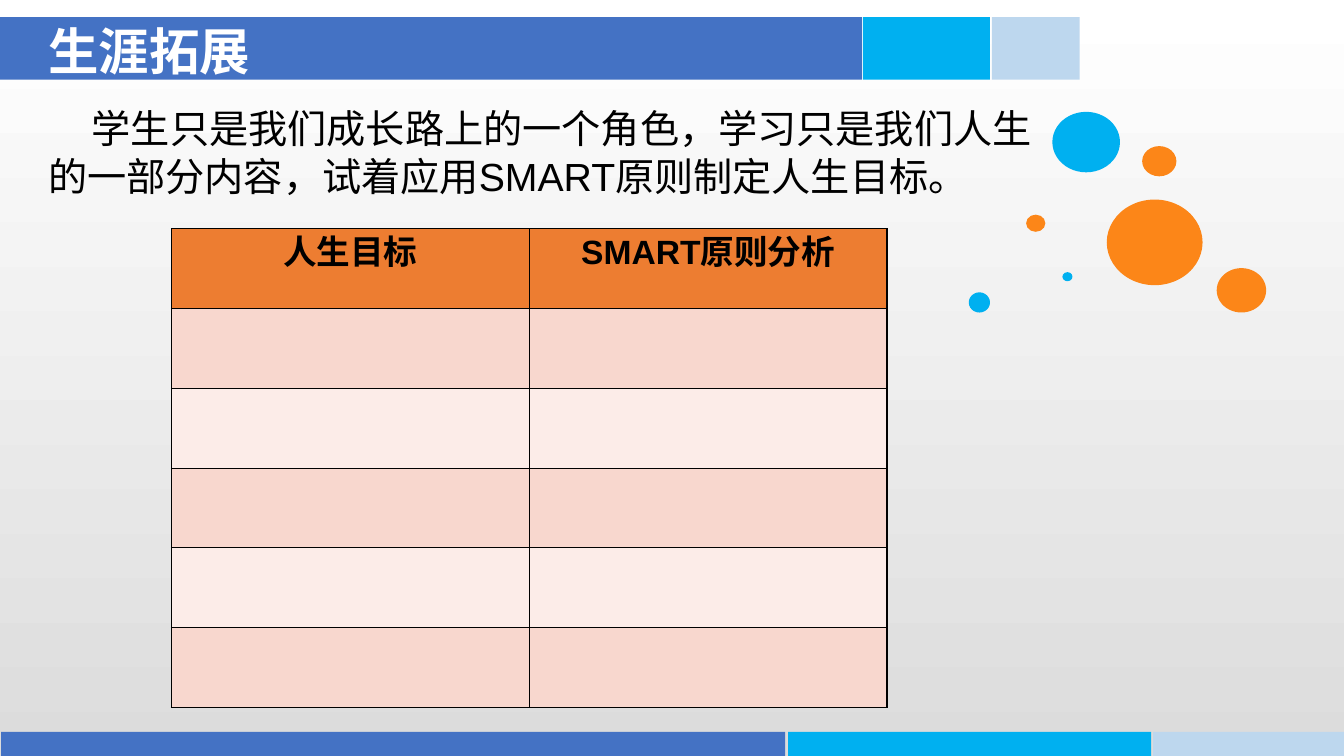
from dataclasses import dataclass

from lxml import etree
from pptx import Presentation
from pptx.dml.color import RGBColor
from pptx.enum.shapes import MSO_SHAPE
from pptx.enum.text import MSO_ANCHOR, PP_ALIGN
from pptx.oxml.ns import qn
from pptx.slide import Slide
from pptx.util import Emu, Inches, Pt

RECTANGLE, OVAL = MSO_SHAPE.RECTANGLE, MSO_SHAPE.OVAL
TOP, MIDDLE = MSO_ANCHOR.TOP, MSO_ANCHOR.MIDDLE
LEFT, CENTER = PP_ALIGN.LEFT, PP_ALIGN.CENTER
SLIDE_WIDTH, SLIDE_HEIGHT = Inches(13.33), Inches(7.5)

COLORS = {
    "white": "FFFFFF", "black": "000000", "grey": "DCDCDC",
    "blue": "4472C4", "sky": "00B0F0", "pale": "BDD7EE",
    "orange": "FC8618", "header": "ED7D31",
    "odd_row": "F8D7CE", "even_row": "FCECE8",
}
TITLE_FORMAT = {"name": "Noto Sans CJK SC", "size": Pt(36), "bold": True}
TASK_FORMAT = {"name": "Arial", "size": Pt(28), "bold": False}
HEADER_FORMAT = {"name": "Arial", "size": Pt(24), "bold": True}

GOAL_HEADERS = ("人生目标", "SMART原则分析")
GOAL_ROWS = 6


@dataclass(frozen=True)
class Area:
    """Percent shares of the slide's width and height."""
    left: float
    top: float
    width: float
    height: float

    def box(self) -> tuple[Emu, Emu, Emu, Emu]:
        return (Emu(int(SLIDE_WIDTH * self.left / 100)),
                Emu(int(SLIDE_HEIGHT * self.top / 100)),
                Emu(int(SLIDE_WIDTH * self.width / 100)),
                Emu(int(SLIDE_HEIGHT * self.height / 100)))


@dataclass(frozen=True)
class Decoration:
    kind: MSO_SHAPE
    area: Area
    color: str


@dataclass(frozen=True)
class Caption:
    area: Area
    text: str
    style: dict
    color: str
    anchor: MSO_ANCHOR
    indent: float = 0


def band(top: float, height: float, spans: tuple) -> list[Decoration]:
    return [Decoration(RECTANGLE, Area(left, top, width, height), color)
            for (left, width), color in zip(spans, ("blue", "sky", "pale"))]


DECORATIONS = [
    *band(2.27, 8.27, ((0, 64.13), (64.2, 9.45), (73.8, 6.53))),
    *band(96.8, 3.2, ((0.08, 58.35), (58.65, 27), (85.8, 14.2))),
    Decoration(OVAL, Area(72.08, 38.67, 1.58, 2.67), "sky"),
    Decoration(OVAL, Area(82.35, 26.4, 7.13, 11.33), "orange"),
    Decoration(OVAL, Area(78.3, 14.8, 5.03, 8), "sky"),
    Decoration(OVAL, Area(90.53, 35.47, 3.68, 5.87), "orange"),
    Decoration(OVAL, Area(84.98, 19.33, 2.55, 4), "orange"),
    Decoration(OVAL, Area(76.35, 28.4, 1.43, 2.27), "orange"),
    Decoration(OVAL, Area(79.05, 36, 0.75, 1.2), "sky"),
]
CAPTIONS = [
    Caption(Area(2.85, 3.2, 29.1, 6.8), "生涯拓展", TITLE_FORMAT, "white", MIDDLE),
    Caption(Area(2.85, 13.2, 75.38, 13.87),
            "学生只是我们成长路上的一个角色，学习只是我们人生的一部分内容，"
            "试着应用SMART原则制定人生目标。",
            TASK_FORMAT, "black", TOP, 3.25),
]
GOAL_AREA = Area(12.75, 30.27, 53.25, 63.33)


def rgb(color: str) -> RGBColor:
    return RGBColor.from_string(COLORS[color])


def write(paragraph, text: str, style: dict, color: str, align: PP_ALIGN) -> None:
    paragraph.alignment = align
    run = paragraph.add_run()
    run.text = text
    for attribute, value in style.items():
        setattr(run.font, attribute, value)
    run.font.color.rgb = rgb(color)
    east_asian = etree.SubElement(run.font._element, qn("a:ea"))
    east_asian.set("typeface", style["name"])


def paint_background(slide: Slide) -> None:
    fill = slide.background.fill
    fill.gradient()
    fill.gradient_angle = 270
    for stop, color, position in zip(fill.gradient_stops, ("white", "grey"), (0, 1)):
        stop.color.rgb = rgb(color)
        stop.position = position


def draw_decoration(slide: Slide, decoration: Decoration) -> None:
    shape = slide.shapes.add_shape(decoration.kind, *decoration.area.box())
    shape.shadow.inherit = False
    shape.fill.solid()
    shape.fill.fore_color.rgb = rgb(decoration.color)
    shape.line.fill.background()


def draw_caption(slide: Slide, caption: Caption) -> None:
    frame = slide.shapes.add_textbox(*caption.area.box()).text_frame
    frame.word_wrap = True
    frame.vertical_anchor = caption.anchor
    paragraph = frame.paragraphs[0]
    write(paragraph, caption.text, caption.style, caption.color, LEFT)
    if caption.indent:
        first_line = int(SLIDE_WIDTH * caption.indent / 100)
        paragraph._p.get_or_add_pPr().set("indent", str(first_line))


def outline_cell(cell) -> None:
    properties = cell._tc.get_or_add_tcPr()
    for position, side in enumerate(("lnL", "lnR", "lnT", "lnB")):
        border = etree.Element(qn(f"a:{side}"), w=str(Pt(1)))
        solid = etree.SubElement(border, qn("a:solidFill"))
        etree.SubElement(solid, qn("a:srgbClr"), val=COLORS["black"])
        properties.insert(position, border)


def draw_goals(slide: Slide) -> None:
    goals = slide.shapes.add_table(
        GOAL_ROWS, len(GOAL_HEADERS), *GOAL_AREA.box()).table
    for row in range(GOAL_ROWS):
        color = "header" if row == 0 else ("even_row", "odd_row")[row % 2]
        for column, header in enumerate(GOAL_HEADERS):
            cell = goals.cell(row, column)
            cell.fill.solid()
            cell.fill.fore_color.rgb = rgb(color)
            outline_cell(cell)
            if row == 0:
                write(cell.text_frame.paragraphs[0], header,
                      HEADER_FORMAT, "black", CENTER)


def main() -> None:
    deck = Presentation()
    deck.slide_width, deck.slide_height = SLIDE_WIDTH, SLIDE_HEIGHT
    slide = deck.slides.add_slide(deck.slide_layouts[6])
    paint_background(slide)
    for decoration in DECORATIONS:
        draw_decoration(slide, decoration)
    for caption in CAPTIONS:
        draw_caption(slide, caption)
    draw_goals(slide)
    deck.save("out.pptx")


if __name__ == "__main__":
    main()
